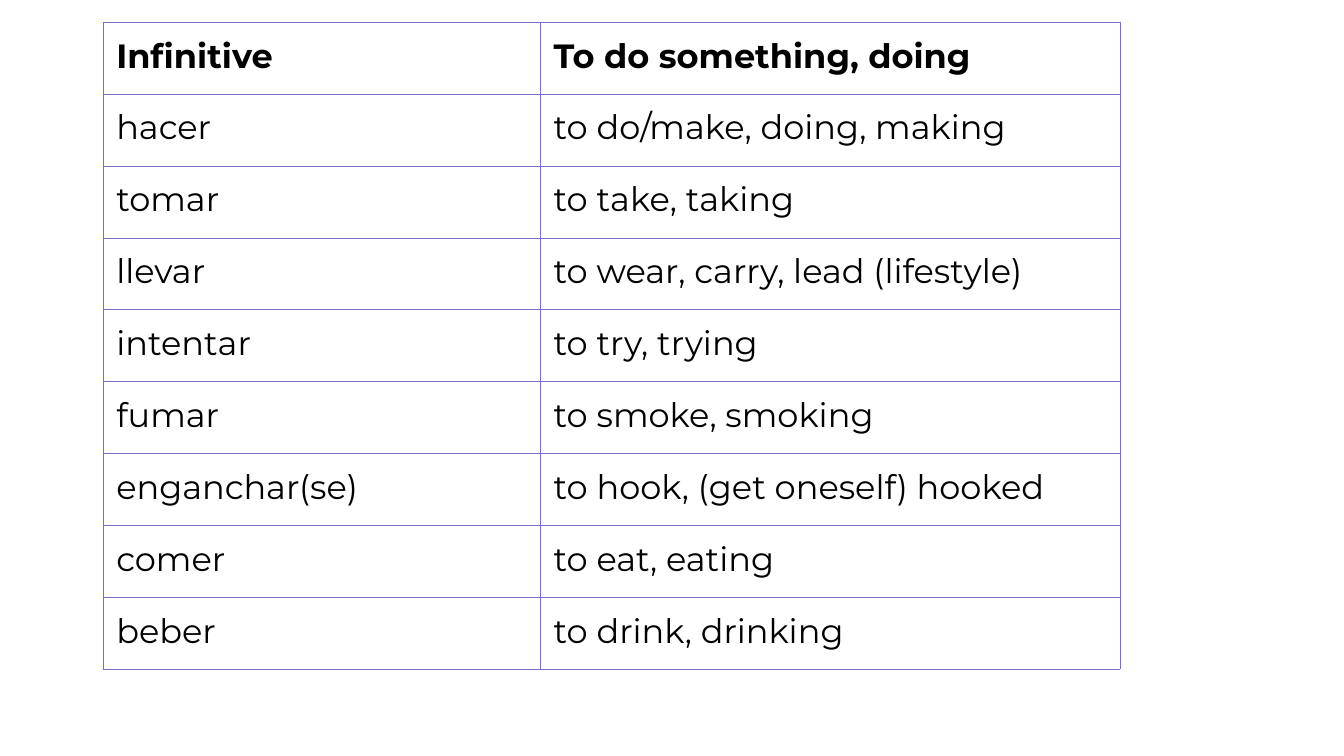
from lxml import etree
from pptx import Presentation
from pptx import util as u
from pptx.dml.color import RGBColor
from pptx.enum import text
from pptx.oxml.ns import qn

VERBS = [
    ("Infinitive", "To do something, doing"),
    ("hacer", "to do/make, doing, making"),
    ("tomar", "to take, taking"),
    ("llevar", "to wear, carry, lead (lifestyle)"),
    ("intentar", "to try, trying"),
    ("fumar", "to smoke, smoking"),
    ("enganchar(se)", "to hook, (get oneself) hooked"),
    ("comer", "to eat, eating"),
    ("beber", "to drink, drinking"),
]
SLIDE_WIDTH, SLIDE_HEIGHT = u.Inches(20), u.Inches(11.25)
LEFT, TOP = u.Inches(1.53), u.Inches(0.33)
COLUMN_WIDTHS = [u.Inches(6.51), u.Inches(8.63)]
ROW_HEIGHT = u.Inches(1.07)
BORDER, BORDER_WIDTH = "786EC8", u.Pt(0.75)
CELL_FORMAT = {
    **{f"margin_{side}": u.Inches(0.2) for side in ("left", "right", "top", "bottom")},
    "vertical_anchor": text.MSO_ANCHOR.TOP,
}
FONT_FORMAT = {"name": "Montserrat", "size": u.Pt(36)}


def color(value):
    return RGBColor.from_string(value)


def apply(target, values):
    for name, value in values.items():
        setattr(target, name, value)


def add_borders(cell):
    properties = cell._tc.get_or_add_tcPr()
    for position, side in enumerate(("lnL", "lnR", "lnT", "lnB")):
        line = etree.Element(qn(f"a:{side}"), w=str(BORDER_WIDTH))
        fill = etree.SubElement(line, qn("a:solidFill"))
        etree.SubElement(fill, qn("a:srgbClr"), val=BORDER)
        properties.insert(position, line)


def fill_cell(cell, words, heading):
    apply(cell, CELL_FORMAT)
    cell.fill.background()
    add_borders(cell)
    span = cell.text_frame.paragraphs[0].add_run()
    span.text = words
    apply(span.font, {**FONT_FORMAT, "bold": heading})
    span.font.color.rgb = color("000000")


def main():
    deck = Presentation()
    apply(deck, {"slide_width": SLIDE_WIDTH, "slide_height": SLIDE_HEIGHT})
    page = deck.slides.add_slide(deck.slide_layouts[6])
    page.background.fill.solid()
    page.background.fill.fore_color.rgb = color("FFFFFF")
    table = page.shapes.add_table(
        len(VERBS), len(COLUMN_WIDTHS), LEFT, TOP,
        sum(COLUMN_WIDTHS), ROW_HEIGHT * len(VERBS),
    ).table
    apply(table, {"first_row": False, "horz_banding": False})
    for column, width in zip(table.columns, COLUMN_WIDTHS):
        column.width = width
    for row, entry in enumerate(VERBS):
        table.rows[row].height = ROW_HEIGHT
        for column, words in enumerate(entry):
            fill_cell(table.cell(row, column), words, row == 0)
    deck.save("out.pptx")


if __name__ == "__main__":
    main()
